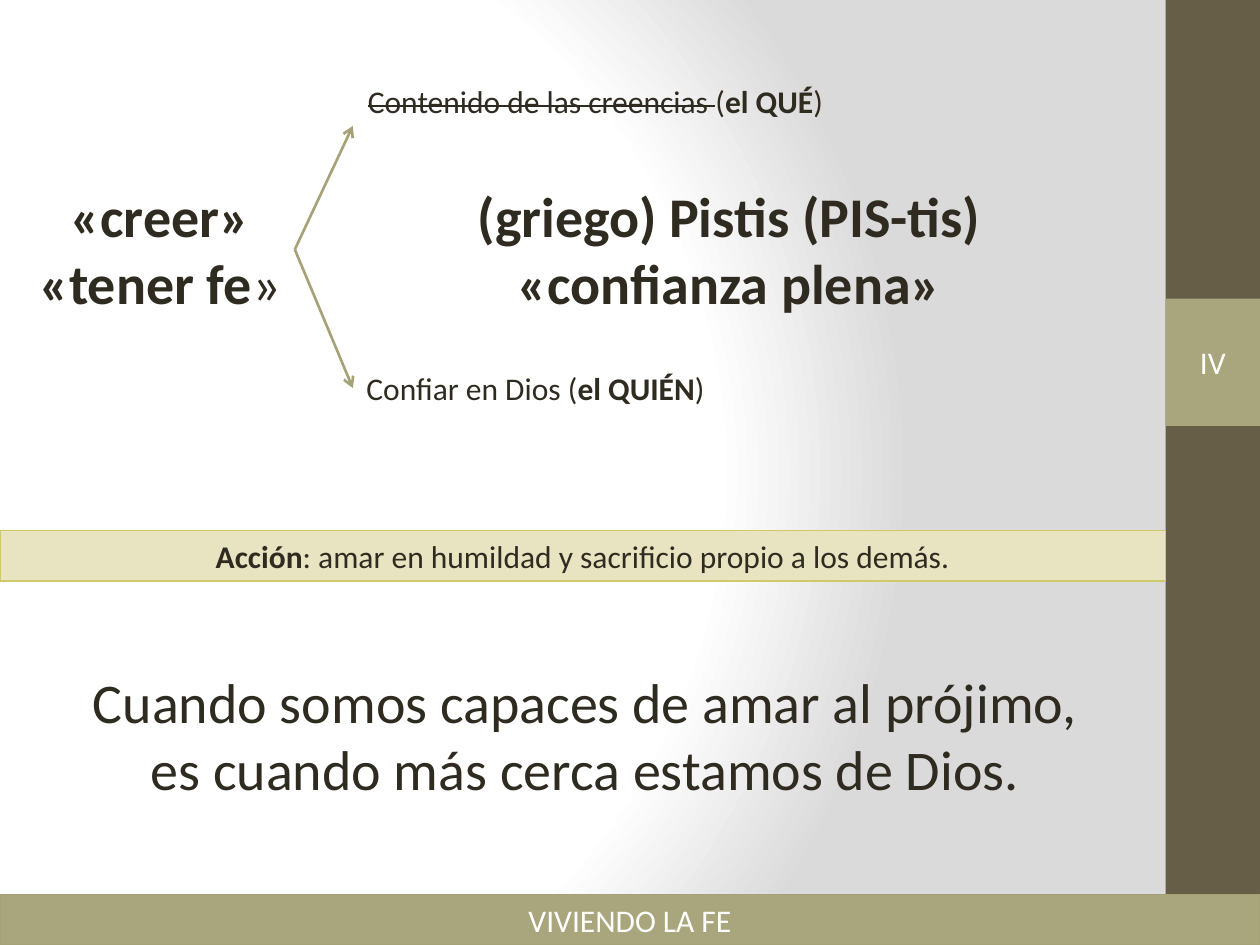
from pptx import Presentation
from pptx import util as u
from pptx.dml.color import RGBColor
from pptx.enum import shapes, text
from pptx.oxml import parse_xml
from pptx.oxml.ns import qn

WIDE, HIGH = 10, 7.5
EDGE = 9.25          # left side of the side band
SIDE = WIDE - EDGE
ROW = 0.4            # height of a one-line strip
PAIR = 1.18          # height of a two-line text
INK, DARK, OLIVE, RIM = "2F2B20", "675E47", "A9A57C", "A6A278"
NS = 'xmlns:a="http://schemas.openxmlformats.org/drawingml/2006/main"'


def hue(code):
    return RGBColor.from_string(code)


def write(shape, *lines, size=18, color=INK, wrap=True, grow=True):
    """Fill a shape with lines, each a list of (words, marks); b bold, s struck."""
    frame = shape.text_frame
    frame.word_wrap = wrap
    fit = text.MSO_AUTO_SIZE
    frame.auto_size = fit.SHAPE_TO_FIT_TEXT if grow else fit.NONE
    for i, line in enumerate(lines):
        para = frame.add_paragraph() if i else frame.paragraphs[0]
        para.alignment = text.PP_ALIGN.CENTER
        for words, marks in line:
            run = para.add_run()
            run.text = words
            font = run.font
            font.name, font.size = "Calibri", u.Pt(size)
            font.color.rgb = hue(color)
            font.bold = "b" in marks
            if "s" in marks:
                run._r.get_or_add_rPr().set("strike", "sngStrike")
    return shape


def label(slide, box, *lines, **form):
    return write(slide.shapes.add_textbox(*map(u.Inches, box)), *lines, **form)


def block(slide, box, fill, rim=None):
    shape = slide.shapes.add_shape(shapes.MSO_SHAPE.RECTANGLE, *map(u.Inches, box))
    shape.shadow.inherit = False
    shape.fill.solid()
    shape.fill.fore_color.rgb = hue(fill)
    if rim:
        shape.line.color.rgb = hue(rim)
        shape.line.width = u.Pt(1)
    else:
        shape.line.fill.background()
    return shape


def arrow(slide, start, end):
    line = slide.shapes.add_connector(
        shapes.MSO_CONNECTOR.STRAIGHT, *map(u.Inches, (*start, *end)))
    line.line.color.rgb = hue(RIM)
    line.line.width = u.Pt(1.5)
    line.line._get_or_add_ln().append(parse_xml(f'<a:tailEnd {NS} type="arrow"/>'))
    line._element.spPr.append(parse_xml(f"<a:effectLst {NS}/>"))
    return line


def glow(slide):
    """Set a round white-to-grey background gradient."""
    slide.background.fill.gradient()
    grad = slide.element.find(".//" + qn("a:gradFill"))
    for child in list(grad):
        grad.remove(child)
    stops = "".join(
        f'<a:gs pos="{pos * 1000}"><a:srgbClr val="{code}"/></a:gs>'
        for pos, code in ((0, "FFFFFF"), (75, "FFFFFF"), (100, "DADADA")))
    grad.append(parse_xml(f"<a:gsLst {NS}>{stops}</a:gsLst>"))
    grad.append(parse_xml(
        f'<a:path {NS} path="circle">'
        '<a:fillToRect l="20000" t="50000" r="100000" b="50000"/></a:path>'))


def main():
    deck = Presentation()
    deck.slide_width, deck.slide_height = u.Inches(WIDE), u.Inches(HIGH)
    slide = deck.slides.add_slide(deck.slide_layouts[6])
    glow(slide)
    block(slide, (EDGE, 0, SIDE, HIGH), DARK)

    faith = label(slide, (0.2, 1.39, 2.14, PAIR), [("«creer»", "b")],
                  [("«tener fe", "b"), ("»", "")], size=32, wrap=False)
    who = label(slide, (2.8, 2.88, 2.9, ROW),
                [("Confiar en Dios (", ""), ("el QUIÉN", "b"), (")", "")], wrap=False)
    label(slide, (2.8, 0.6, 3.85, ROW),
          [("Contenido de las creencias ", "s"), ("(", ""), ("el QUÉ", "b"), (")", "")],
          wrap=False)
    label(slide, (2.56, 1.39, 6.46, PAIR), [("(griego) Pistis (PIS-tis)", "b")],
          [("«confianza plena»", "b")], size=32)

    fork = (2.33, 1.98)
    up, down = (arrow(slide, fork, (2.8, y)) for y in (1, 3.09))
    for line in (up, down):
        line.begin_connect(faith, 3)
    down.end_connect(who, 1)

    write(block(slide, (0, 4.21, EDGE, ROW), "E8E4C1", "D0C967"),
          [("Acción", "b"),
           (": amar en humildad y sacrificio propio a los demás.", "")])
    label(slide, (0.59, 5.25, 8.11, PAIR),
          [("Cuando somos capaces de amar al prójimo, "
            "es cuando más cerca estamos de Dios.", "")], size=32)

    write(block(slide, (0, HIGH - ROW, WIDE, ROW), OLIVE, RIM),
          [("VIVIENDO LA FE", "")], color="FFFFFF")
    write(block(slide, (EDGE, 2.37, SIDE, 1.01), OLIVE),
          [("IV", "")], color="FFFFFF", grow=False)
    deck.save("out.pptx")


if __name__ == "__main__":
    main()
